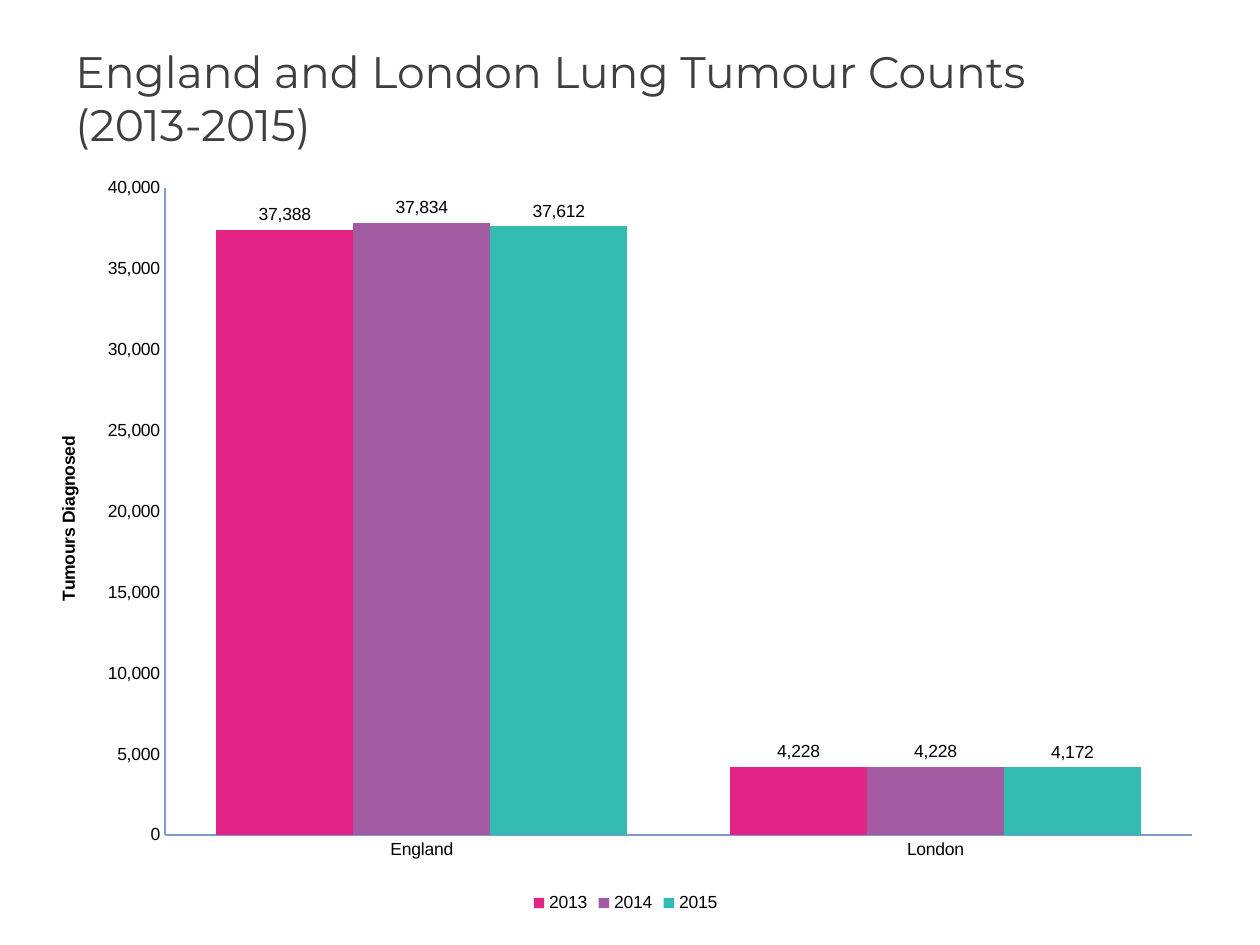
"""Build a slide with a column chart of lung tumour counts in England and London."""
from lxml import etree
from pptx import Presentation
from pptx import util as u
from pptx.chart.data import CategoryChartData
from pptx.dml.color import RGBColor
from pptx.enum import chart as ch, text
from pptx.oxml.ns import qn

PX = 914400 // 126
COLORS = {"title": "3F3F3F", "text": "000000", "axis": "7C9CCB",
          "2013": "E32486", "2014": "A25BA0", "2015": "33BBB1"}
COUNTS = {"2013": (37388, 4228), "2014": (37834, 4228), "2015": (37612, 4172)}
PLOT_AREA = {"x": 0.11, "y": 0.03, "w": 0.87, "h": 0.86}


def style(font, size, name, color):
    font.size, font.name = u.Pt(size), name
    font.color.rgb = RGBColor.from_string(COLORS[color])


prs = Presentation()
prs.slide_width, prs.slide_height = 1260 * PX, 945 * PX
s = prs.slides.add_slide(prs.slide_layouts[6])

title = s.shapes.add_textbox(63 * PX, 38 * PX, 1134 * PX, 157 * PX)
tf = title.text_frame
tf.word_wrap = True
tf.vertical_anchor = text.MSO_ANCHOR.TOP
p = tf.paragraphs[0]
p.text = "England and London Lung Tumour Counts \v(2013-2015)"
for r in p.runs:
    style(r.font, 25.2, "Montserrat", "title")

data = CategoryChartData(number_format="#,##0")
data.categories = ["England", "London"]
for year, counts in COUNTS.items():
    data.add_series(year, counts)
chart = s.shapes.add_chart(ch.XL_CHART_TYPE.COLUMN_CLUSTERED, 35 * PX, 165 * PX,
                           1181 * PX, 753 * PX, data).chart
style(chart.font, 10, "Arial", "text")
chart.has_title = False
chart.has_legend = True
chart.legend.position = ch.XL_LEGEND_POSITION.BOTTOM
chart.legend.include_in_layout = False

plot = chart.plots[0]
plot.gap_width, plot.overlap = 75, 0
plot.vary_by_categories = False
for series in plot.series:
    series.format.fill.solid()
    series.format.fill.fore_color.rgb = RGBColor.from_string(COLORS[series.name])
    labels = series.data_labels
    labels.show_value = True
    labels.number_format, labels.number_format_is_linked = "#,##0", False
    labels.position = ch.XL_LABEL_POSITION.OUTSIDE_END

for axis in (chart.category_axis, chart.value_axis):
    axis.has_major_gridlines = False
    axis.major_tick_mark = axis.minor_tick_mark = ch.XL_TICK_MARK.NONE
    axis.format.line.color.rgb = RGBColor.from_string(COLORS["axis"])
    axis.format.line.width = u.Pt(0.75)

counts_axis = chart.value_axis
counts_axis.minimum_scale, counts_axis.maximum_scale = 0, 40000
counts_axis.major_unit = 5000
counts_axis.tick_labels.number_format = "#,##0"
counts_axis.tick_labels.number_format_is_linked = False
tf = counts_axis.axis_title.text_frame
tf.text = "Tumours Diagnosed"
font = tf.paragraphs[0].runs[0].font
style(font, 10, "Arial", "text")
font.bold = True
tf._txBody.find(qn("a:bodyPr")).set("rot", "-5400000")

area = chart._chartSpace.chart.plotArea
for old in area.findall(qn("c:layout")):
    area.remove(old)
layout = etree.Element(qn("c:layout"))
area.insert(0, layout)
manual = etree.SubElement(layout, qn("c:manualLayout"))
settings = {"layoutTarget": "inner", "xMode": "edge", "yMode": "edge", **PLOT_AREA}
for tag, value in settings.items():
    etree.SubElement(manual, qn(f"c:{tag}")).set("val", str(value))

prs.save("out.pptx")
